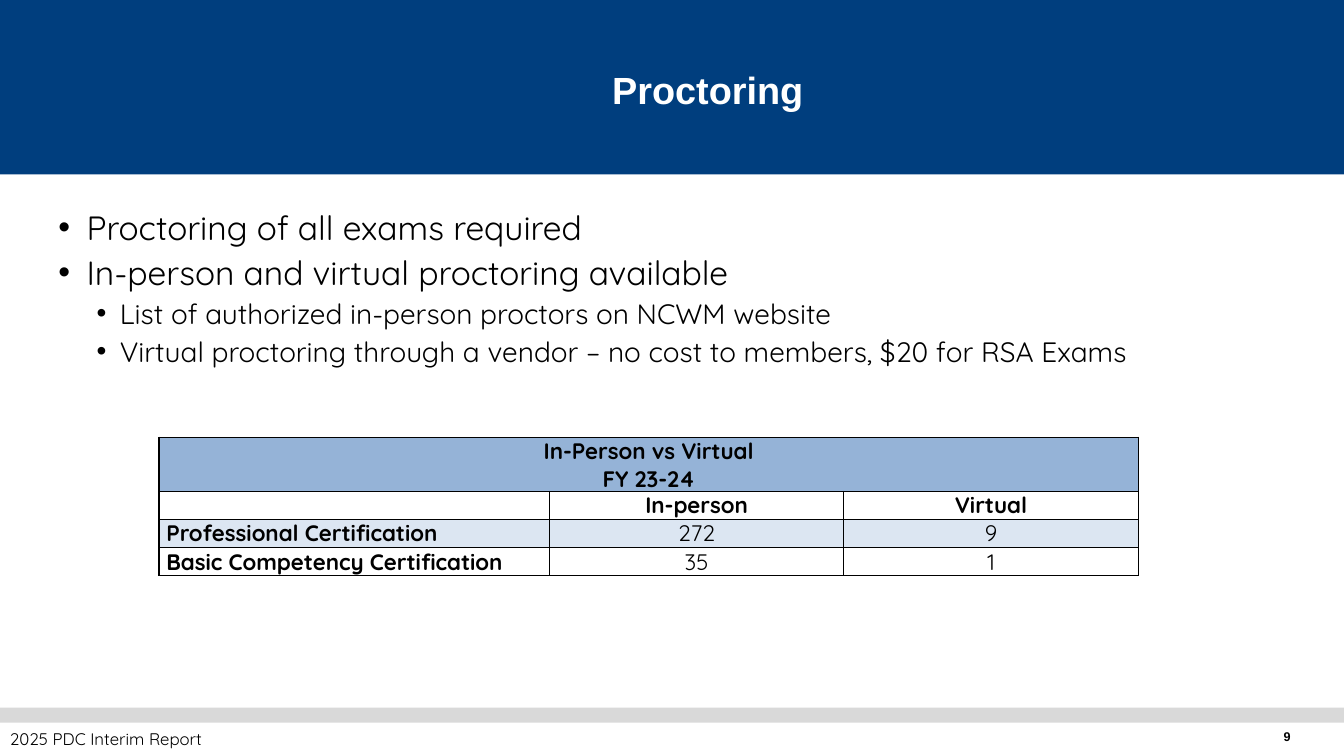
from dataclasses import dataclass

from lxml import etree
from pptx import Presentation
from pptx.dml.color import RGBColor
from pptx.enum.shapes import MSO_SHAPE
from pptx.enum.text import PP_ALIGN
from pptx.oxml.ns import qn
from pptx.util import Inches, Pt

RECTANGLE = MSO_SHAPE.RECTANGLE
LEFT, CENTER, RIGHT = PP_ALIGN.LEFT, PP_ALIGN.CENTER, PP_ALIGN.RIGHT


@dataclass(frozen=True)
class Theme:
    navy: str = "003E7E"
    grey: str = "D9D9D9"
    white: str = "FFFFFF"
    black: str = "000000"
    header_blue: str = "95B3D7"
    band_blue: str = "DCE6F2"
    heading_font: str = "Arial"
    body_font: str = "Quicksand"
    title_size: int = 27
    bullet_sizes: tuple = (24, 20)
    table_size: int = 16
    footer_size: int = 12
    number_size: int = 9


theme = Theme()


def style(paragraph, font_name, size, color=theme.black, bold=False, align=LEFT):
    paragraph.alignment = align
    font = paragraph.font
    font.name, font.size, font.bold = font_name, Pt(size), bold
    font.color.rgb = RGBColor.from_string(color)


def add_text(left, top, width, height, text, wrap=True):
    box = slide.shapes.add_textbox(Inches(left), Inches(top), Inches(width), Inches(height))
    box.text_frame.word_wrap = wrap
    box.text_frame.text = text
    return box.text_frame.paragraphs


presentation = Presentation()
presentation.slide_width, presentation.slide_height = Inches(13.33), Inches(7.5)
slide = presentation.slides.add_slide(presentation.slide_layouts[6])

# Title band and footer rule
for top, height, color in ((0, 1.73, theme.navy), (7.02, 0.15, theme.grey)):
    band = slide.shapes.add_shape(RECTANGLE, 0, Inches(top), presentation.slide_width, Inches(height))
    band.shadow.inherit = False
    band.fill.solid()
    band.fill.fore_color.rgb = RGBColor.from_string(color)
    band.line.fill.background()

# Title
title = add_text(4.55, 0.61, 4.94, 0.9, "Proctoring")[0]
style(title, theme.heading_font, theme.title_size, theme.white, True, CENTER)

# Bullets: level and text
bullets = [
    (0, "Proctoring of all exams required"),
    (0, "In-person and virtual proctoring available"),
    (1, "List of authorized in-person proctors on NCWM website"),
    (1, "Virtual proctoring through a vendor – no cost to members, $20 for RSA Exams"),
]
indents = ((0.28, 0.28), (0.61, 0.23))
paragraphs = add_text(0.48, 2, 12.31, 5, "\n".join(text for _, text in bullets))
for index, (paragraph, (level, _)) in enumerate(zip(paragraphs, bullets)):
    margin, hanging = indents[level]
    size = theme.bullet_sizes[level]
    paragraph.level = level
    properties = paragraph._p.get_or_add_pPr()
    properties.set("marL", str(Inches(margin)))
    properties.set("indent", str(-Inches(hanging)))
    etree.SubElement(properties, qn("a:buFont"), typeface="Arial")
    etree.SubElement(properties, qn("a:buChar"), char="•")
    if index:
        paragraph.space_before = Pt(size * 0.15)
    style(paragraph, theme.body_font, size)

# Proctoring table
rows = [
    ("In-Person vs Virtual\nFY 23-24", "", ""),
    ("", "In-person", "Virtual"),
    ("Professional Certification", "272", "9"),
    ("Basic Competency Certification", "35", "1"),
]
row_fills = (theme.header_blue, None, theme.band_blue, None)
row_heights = (0.53, 0.28, 0.28, 0.28)
column_widths = (3.87, 2.92, 2.92)
frame = slide.shapes.add_table(len(rows), len(column_widths), Inches(1.58), Inches(4.34),
                               Inches(sum(column_widths)), Inches(sum(row_heights)))
table = frame.table
for column, width in zip(table.columns, column_widths):
    column.width = Inches(width)
table.cell(0, 0).merge(table.cell(0, 2))

for r, values in enumerate(rows):
    table.rows[r].height = Inches(row_heights[r])
    for c, value in enumerate(values):
        cell = table.cell(r, c)
        cell.margin_left = cell.margin_right = Inches(0.07)
        cell.margin_top = cell.margin_bottom = 0
        cell.text = value
        for paragraph in cell.text_frame.paragraphs:
            style(paragraph, theme.body_font, theme.table_size, bold=r < 2 or c == 0,
                  align=LEFT if r > 1 and c == 0 else CENTER)
            if not value:
                etree.SubElement(paragraph._p, qn("a:endParaRPr"), sz=str(theme.table_size * 100))

        # The left and top outer edges are heavier
        cell_properties = cell._tc.get_or_add_tcPr()
        for edge, heavy in (("L", c == 0), ("R", False), ("T", r == 0), ("B", False)):
            line = etree.SubElement(cell_properties, qn(f"a:ln{edge}"), w=str(Pt(1.5 if heavy else 0.75)))
            line_fill = etree.SubElement(line, qn("a:solidFill"))
            etree.SubElement(line_fill, qn("a:srgbClr"), val=theme.black)

        if row_fills[r]:
            cell.fill.solid()
            cell.fill.fore_color.rgb = RGBColor.from_string(row_fills[r])
        else:
            cell.fill.background()

# Footer and page number
footer = add_text(0, 7.18, 2.17, 0.3, "2025 PDC Interim Report", wrap=False)[0]
style(footer, theme.body_font, theme.footer_size)
number = add_text(11.4, 7.18, 1.5, 0.17, "9")[0]
style(number, theme.heading_font, theme.number_size, bold=True, align=RIGHT)

presentation.save("out.pptx")
